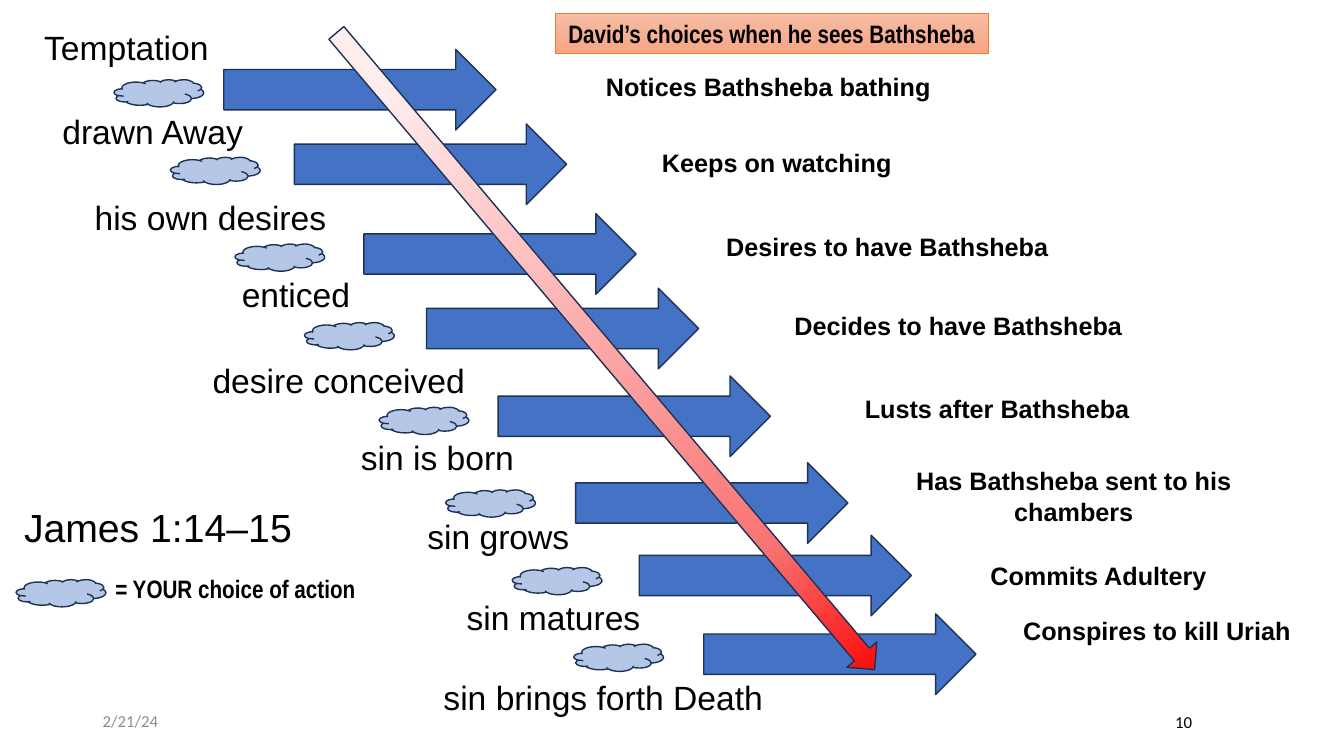
from dataclasses import dataclass

from lxml.etree import SubElement
from pptx import Presentation
from pptx.dml.color import RGBColor
from pptx.enum.shapes import MSO_SHAPE as Kind
from pptx.enum.text import MSO_ANCHOR as Anchor, PP_ALIGN as Align
from pptx.oxml.ns import qn
from pptx.shapes.autoshape import Shape
from pptx.util import Inches, Pt

BLACK = RGBColor(0x00, 0x00, 0x00)
GRAY = RGBColor(0x8C, 0x8C, 0x8C)
NAVY = RGBColor(0x1E, 0x32, 0x56)
BLUE = RGBColor(0x44, 0x72, 0xC4)
PALE = RGBColor(0xB4, 0xC7, 0xE7)
ORANGE = RGBColor(0xED, 0x7D, 0x31)
PEACH = [
    (0, RGBColor(0xF7, 0xBD, 0xA5)),
    (50, RGBColor(0xF5, 0xB1, 0x96)),
    (100, RGBColor(0xF8, 0xA5, 0x82)),
]
REDS = [
    (10, RGBColor(0xFF, 0xED, 0xED)),
    (79, RGBColor(0xF9, 0x74, 0x74)),
    (100, RGBColor(0xFD, 0x00, 0x00)),
]


@dataclass
class Box:
    left: float
    top: float
    width: float
    height: float


@dataclass
class Style:
    size: float
    face: str = "Arial"
    bold: bool = False
    align: Align = Align.LEFT
    color: RGBColor = BLACK
    anchor: Anchor = Anchor.TOP
    wrap: bool = True


@dataclass
class Label:
    text: str
    box: Box


@dataclass
class Step:
    label: Label
    cloud: tuple[float, float]
    arrow: tuple[float, float]
    deed: Label


STAGE = Style(24)
DEED = Style(18, bold=True, align=Align.CENTER)
NARROW = Style(18, "Arial Narrow", True, Align.CENTER, wrap=False)
VERSE = Style(28)
DATE = Style(12, "Calibri", color=GRAY, anchor=Anchor.MIDDLE)
PAGE = Style(12, "Calibri", align=Align.CENTER, anchor=Anchor.MIDDLE)

STEPS = [
    Step(Label("Temptation", Box(0.34, 0.22, 2.33, 0.5)), (1.13, 0.79), (2.22, 0.49),
         Label("Notices Bathsheba bathing", Box(5.51, 0.66, 4.22, 0.4))),
    Step(Label("drawn Away", Box(0.52, 1.05, 2.52, 0.5)), (1.69, 1.56), (2.92, 1.23),
         Label("Keeps on watching", Box(6.22, 1.41, 2.97, 0.4))),
    Step(Label("his own desires", Box(0.84, 1.9, 3.14, 0.5)), (2.33, 2.42), (3.61, 2.12),
         Label("Desires to have Bathsheba", Box(6.73, 2.25, 4.14, 0.4))),
    Step(Label("enticed", Box(2.3, 2.67, 1.64, 0.5)), (3.02, 3.2), (4.23, 2.86),
         Label("Decides to have Bathsheba", Box(7.42, 3.03, 4.17, 0.4))),
    Step(Label("desire conceived", Box(2.01, 3.52, 3.44, 0.5)), (3.76, 4.04), (4.94, 3.73),
         Label("Lusts after Bathsheba", Box(8.09, 3.85, 3.6, 0.4))),
    Step(Label("sin is born", Box(3.48, 4.29, 2.18, 0.5)), (4.42, 4.86), (5.71, 4.59),
         Label("Has Bathsheba sent to his chambers", Box(8.85, 4.57, 3.6, 0.71))),
    Step(Label("sin grows", Box(4.14, 5.07, 2.06, 0.5)), (5.08, 5.63), (6.34, 5.31),
         Label("Commits Adultery", Box(9.47, 5.51, 2.85, 0.4))),
    Step(Label("sin matures", Box(4.53, 5.87, 2.43, 0.5)), (5.69, 6.39), (6.98, 6.09),
         Label("Conspires to kill Uriah", Box(10.01, 6.06, 2.93, 0.71))),
]
DEATH = Label("sin brings forth Death", Box(4.3, 6.67, 4.55, 0.5))

deck = Presentation()
deck.slide_width, deck.slide_height = Inches(13.33), Inches(7.5)
slide = deck.slides.add_slide(deck.slide_layouts[6])


def place(box: Box) -> list[int]:
    return [Inches(n) for n in (box.left, box.top, box.width, box.height)]


def fill_text(shape: Shape, text: str, style: Style) -> None:
    frame = shape.text_frame
    frame.word_wrap = style.wrap
    frame.vertical_anchor = style.anchor
    para = frame.paragraphs[0]
    para.text = text
    para.alignment = style.align
    font = para.font
    font.size, font.name, font.bold = Pt(style.size), style.face, style.bold
    font.color.rgb = style.color


def write(label: Label, style: Style) -> None:
    fill_text(slide.shapes.add_textbox(*place(label.box)), label.text, style)


def draw(kind: Kind, box: Box, line: RGBColor = NAVY, weight: float = 1) -> Shape:
    shape = slide.shapes.add_shape(kind, *place(box))
    shape.shadow.inherit = False
    shape.line.color.rgb = line
    shape.line.width = Pt(weight)
    return shape


def paint(shape: Shape, color: RGBColor) -> None:
    shape.fill.solid()
    shape.fill.fore_color.rgb = color


def blend(shape: Shape, angle: float, stops: list[tuple[int, RGBColor]]) -> None:
    shape.fill.gradient()
    shape.fill.gradient_angle = angle
    group = shape._element.spPr.find(qn("a:gradFill")).find(qn("a:gsLst"))
    for old in list(group):
        group.remove(old)
    for spot, color in stops:
        stop = SubElement(group, qn("a:gs"), pos=str(spot * 1000))
        SubElement(stop, qn("a:srgbClr"), val=str(color))


def cloud(left: float, top: float) -> None:
    paint(draw(Kind.CLOUD, Box(left, top, 0.89, 0.27)), PALE)


def arrow(left: float, top: float) -> None:
    paint(draw(Kind.RIGHT_ARROW, Box(left, top, 2.7, 0.8)), BLUE)


def main() -> None:
    write(Label("2/21/24", Box(0.92, 6.95, 3, 0.4)), DATE)
    write(Label("10", Box(10.24, 6.96, 3, 0.4)), PAGE)
    for step in STEPS:
        write(step.label, STAGE)
        cloud(*step.cloud)
        arrow(*step.arrow)
        write(step.deed, DEED)
    write(DEATH, STAGE)

    write(Label("James 1:14–15", Box(0.14, 4.94, 3.36, 0.57)), VERSE)
    cloud(0.16, 5.75)
    write(Label("= YOUR choice of action", Box(1.03, 5.64, 2.61, 0.4)), NARROW)

    title = draw(Kind.RECTANGLE, Box(5.51, 0.13, 4.29, 0.4), ORANGE, 0.5)
    blend(title, 270, PEACH)
    fill_text(title, "David’s choices when he sees Bathsheba", NARROW)

    slope = draw(Kind.RIGHT_ARROW, Box(1.87, 3.29, 8.27, 0.39))
    slope.rotation = 49.8
    blend(slope, 0, REDS)
    deck.save("out.pptx")


if __name__ == "__main__":
    main()
